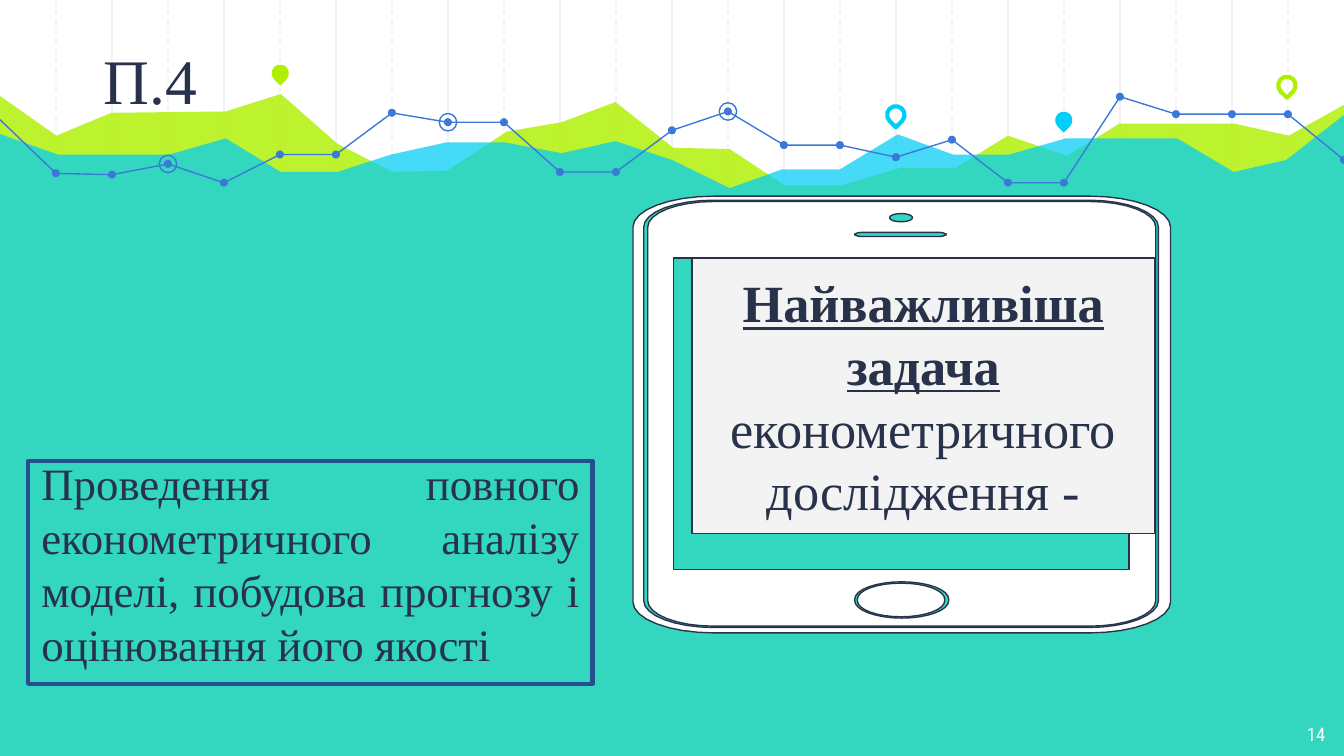
import math
from dataclasses import dataclass
from typing import NamedTuple, Optional

from lxml import etree
from pptx import Presentation
from pptx.dml.color import RGBColor
from pptx.enum.dml import MSO_LINE
from pptx.enum.shapes import MSO_CONNECTOR, MSO_SHAPE
from pptx.enum.text import MSO_ANCHOR, MSO_AUTO_SIZE, PP_ALIGN
from pptx.oxml.ns import qn
from pptx.util import Cm, Pt

DASH = MSO_LINE.DASH
STRAIGHT = MSO_CONNECTOR.STRAIGHT
ELLIPSE, RECTANGLE, TEARDROP = MSO_SHAPE.OVAL, MSO_SHAPE.RECTANGLE, MSO_SHAPE.TEAR
TOP, MIDDLE, BOTTOM = MSO_ANCHOR.TOP, MSO_ANCHOR.MIDDLE, MSO_ANCHOR.BOTTOM
LEFT, CENTER, RIGHT, JUSTIFY = PP_ALIGN.LEFT, PP_ALIGN.CENTER, PP_ALIGN.RIGHT, PP_ALIGN.JUSTIFY


@dataclass(frozen=True)
class Theme:
    ink: str = "28324A"
    paper: str = "FFFFFF"
    pale: str = "F3F3F3"
    lime: str = "AFF000"
    cyan: str = "00CEF6"
    trend: str = "3C78D8"
    frame: str = "274E8D"
    serif: str = "Times New Roman"
    sans: str = "Roboto Condensed"
    title_size: float = 34
    task_size: float = 28
    answer_size: float = 24
    number_size: float = 10
    thin: float = 0.75
    thick: float = 2.25


class Box(NamedTuple):
    left: float
    top: float
    width: float
    height: float


class Pin(NamedTuple):
    x: float
    y: float
    color: str
    hollow: bool


class Outline(NamedTuple):
    """Rectangle with elliptical corners; corners of half its size make an ellipse."""
    left: float
    top: float
    right: float
    bottom: float
    radius_x: float = 0
    radius_y: float = 0


THEME = Theme()
COLUMN = 10 / 24
MARKER, RING = 0.06, 0.13
LIME_HILLS = [
    (-0.02, 0.7), (0.42, 1.01), (0.83, 0.84), (1.68, 0.83), (2.09, 0.7), (2.51, 1.07),
    (2.92, 1.28), (3.33, 1.27), (3.77, 0.98), (4.18, 0.91), (4.58, 0.76), (5.01, 1.1),
    (5.43, 1.11), (5.84, 1.38), (6.26, 1.38), (6.7, 1.25), (7.11, 1.25), (7.5, 1.01),
    (7.94, 1.16), (8.33, 0.92), (9.18, 0.92), (9.59, 1.01), (10.02, 0.77), (10.04, 5.67),
    (-0.02, 5.67)]
CYAN_HILLS = [
    (-0.02, 0.99), (0.43, 1.15), (1.26, 1.15), (1.68, 1.03), (2.09, 1.28), (2.51, 1.28),
    (2.91, 1.15), (3.32, 1.06), (3.76, 1.06), (4.18, 1.14), (4.58, 1.05), (5, 1.19),
    (5.43, 1.4), (5.82, 1.26), (6.25, 1.26), (6.68, 1), (7.09, 1.15), (7.51, 1.15),
    (7.93, 1.03), (8.76, 1.03), (9.18, 1.28), (9.57, 1.19), (10.02, 0.84), (10.04, 5.66),
    (-0.04, 5.66)]
TREND_HEIGHTS = [
    0.89, 1.29, 1.3, 1.22, 1.36, 1.15, 1.15, 0.84, 0.91, 0.91, 1.28, 1.28, 0.97,
    0.83, 1.08, 1.08, 1.17, 1.04, 1.36, 1.36, 0.72, 0.85, 0.85, 0.85, 1.19]
TREND_SECTIONS = [(0, 11), (11, 20), (20, 24)]
RINGED_COLUMNS = [8, 3, 13]
PINS = [
    Pin(2.02, 0.48, THEME.lime, False), Pin(6.6, 0.79, THEME.cyan, True),
    Pin(7.85, 0.83, THEME.cyan, False), Pin(9.51, 0.57, THEME.lime, True)]
PHONE = [
    Outline(4.71, 1.46, 8.71, 4.71, 0.6, 0.23),
    Outline(4.79, 1.49, 8.62, 4.67, 0.52, 0.2),
    Outline(4.82, 1.5, 8.6, 4.66, 0.49, 0.19),
    Outline(5.01, 1.92, 8.4, 4.24),
    Outline(6.62, 1.59, 6.79, 1.65, 0.08, 0.03),
    Outline(6.36, 1.73, 7.04, 1.76, 0.05, 0.02),
    Outline(6.36, 4.33, 7.06, 4.6, 0.35, 0.13),
    Outline(6.38, 4.34, 7.03, 4.59, 0.32, 0.12)]


def length(inches: float) -> Cm:
    return Cm(inches * 2.54)


def paint(shape, fill: Optional[str] = None, line: Optional[str] = None,
          width: float = THEME.thin, opacity: int = 100) -> None:
    shape.shadow.inherit = False
    if fill:
        shape.fill.solid()
        shape.fill.fore_color.rgb = RGBColor.from_string(fill)
        if opacity < 100:
            color = next(shape.element.spPr.iter(qn("a:srgbClr")))
            etree.SubElement(color, qn("a:alpha"), val=str(opacity * 1000))
    else:
        shape.fill.background()
    if line:
        shape.line.color.rgb = RGBColor.from_string(line)
        shape.line.width = Pt(width)
    else:
        shape.line.fill.background()


def add_preset(slide, kind, box: Box, **look):
    shape = slide.shapes.add_shape(kind, *map(length, box))
    paint(shape, **look)
    return shape


def add_contours(slide, contours: list, closed: bool = True, **look) -> None:
    """Draw all contours as one freeform, so that inner ones become holes."""
    scaled = [[(length(x), length(y)) for x, y in contour] for contour in contours]
    builder = slide.shapes.build_freeform(*scaled[0][0])
    for index, points in enumerate(scaled):
        if index:
            builder.move_to(*points[0])
        builder.add_line_segments(points[1:], close=closed)
    paint(builder.convert_to_shape(), **look)


def outline_points(outline: Outline, steps: int = 8) -> list:
    left, top, right, bottom, rx, ry = outline
    if not rx:
        return [(left, top), (right, top), (right, bottom), (left, bottom)]
    centers = [(right - rx, bottom - ry), (left + rx, bottom - ry),
               (left + rx, top + ry), (right - rx, top + ry)]
    points = []
    for quarter, (x, y) in enumerate(centers):
        for step in range(steps + 1):
            angle = (quarter + step / steps) * math.pi / 2
            points.append((x + rx * math.cos(angle), y + ry * math.sin(angle)))
    return points


def add_grid_line(slide, column: int) -> None:
    x = length(column * COLUMN)
    grid_line = slide.shapes.add_connector(STRAIGHT, x, 0, x, length(5.62))
    grid_line.line.color.rgb = RGBColor.from_string(THEME.pale)
    grid_line.line.width = Pt(THEME.thin)
    if column % 2:
        grid_line.line.dash_style = DASH
    etree.SubElement(grid_line.element.spPr, qn("a:effectLst"))


def add_trend_dot(slide, column: int, size: float, **look) -> None:
    x, y = column * COLUMN, TREND_HEIGHTS[column]
    add_preset(slide, ELLIPSE, Box(x - size / 2, y - size / 2, size, size), **look)


def add_pin(slide, pin: Pin) -> None:
    look = {"line": pin.color, "width": THEME.thick} if pin.hollow else {"fill": pin.color}
    add_preset(slide, TEARDROP, Box(pin.x, pin.y, RING, RING), **look).rotation = 135


def write(shape, parts: list, size: float, align, anchor, font: str = THEME.serif,
          color: str = THEME.ink, inset: float = 0.1):
    """Fill one paragraph with runs and return it."""
    frame = shape.text_frame
    frame.word_wrap = True
    frame.auto_size = MSO_AUTO_SIZE.NONE
    frame.vertical_anchor = anchor
    frame.margin_left = frame.margin_right = length(0.1)
    frame.margin_top = frame.margin_bottom = length(inset)
    paragraph = frame.paragraphs[0]
    paragraph.text = parts[0]
    for part in parts[1:]:
        paragraph.add_run().text = part
    paragraph.alignment = align
    for run in paragraph.runs:
        run.font.size = Pt(size)
        run.font.name = font
        run.font.color.rgb = RGBColor.from_string(color)
    return paragraph


def draw_landscape(slide) -> None:
    for column in [*range(2, 24, 2), *range(1, 24, 2)]:
        add_grid_line(slide, column)
    add_contours(slide, [LIME_HILLS], fill=THEME.lime, opacity=82)
    add_contours(slide, [CYAN_HILLS], fill=THEME.cyan, opacity=73)
    for first, last in TREND_SECTIONS:
        section = [(k * COLUMN, TREND_HEIGHTS[k]) for k in range(first, last + 1)]
        add_contours(slide, [section], closed=False, line=THEME.trend)
    for column in range(1, 25):
        add_trend_dot(slide, column, MARKER, fill=THEME.trend)
    for column in RINGED_COLUMNS:
        add_trend_dot(slide, column, RING, line=THEME.trend)
    for pin in PINS:
        add_pin(slide, pin)


def main() -> None:
    deck = Presentation()
    deck.slide_width, deck.slide_height = Cm(25.4), Cm(14.29)
    slide = deck.slides.add_slide(deck.slide_layouts[5])
    draw_landscape(slide)
    add_contours(slide, [outline_points(part) for part in PHONE],
                 fill=THEME.paper, line=THEME.ink)

    task = add_preset(slide, RECTANGLE, Box(5.15, 1.92, 3.44, 2.05),
                      fill=THEME.pale, line=THEME.ink)
    task_text = write(task, ["Найважливіша задача", " економетричного дослідження -"],
                      THEME.task_size, CENTER, MIDDLE)
    task_text.runs[0].font.bold = task_text.runs[0].font.underline = True

    answer = add_preset(slide, RECTANGLE, Box(0.21, 3.43, 4.2, 1.66),
                        line=THEME.frame, width=THEME.thick)
    write(answer, ["Проведення повного економетричного аналізу моделі, "
                   "побудова прогнозу і оцінювання його якості"],
          THEME.answer_size, JUSTIFY, BOTTOM).space_before = Pt(6)

    page_number = slide.shapes.add_textbox(*map(length, Box(9.36, 5.28, 0.6, 0.35)))
    write(page_number, ["14"], THEME.number_size, RIGHT, TOP, THEME.sans, THEME.paper)

    title = slide.shapes.title
    title.left, title.top, title.width, title.height = map(length, Box(0.67, 0.31, 1.1, 0.56))
    write(title, ["П.4"], THEME.title_size, LEFT, MIDDLE, inset=0.05)
    title.element.getparent().append(title.element)
    deck.save("out.pptx")


if __name__ == "__main__":
    main()
